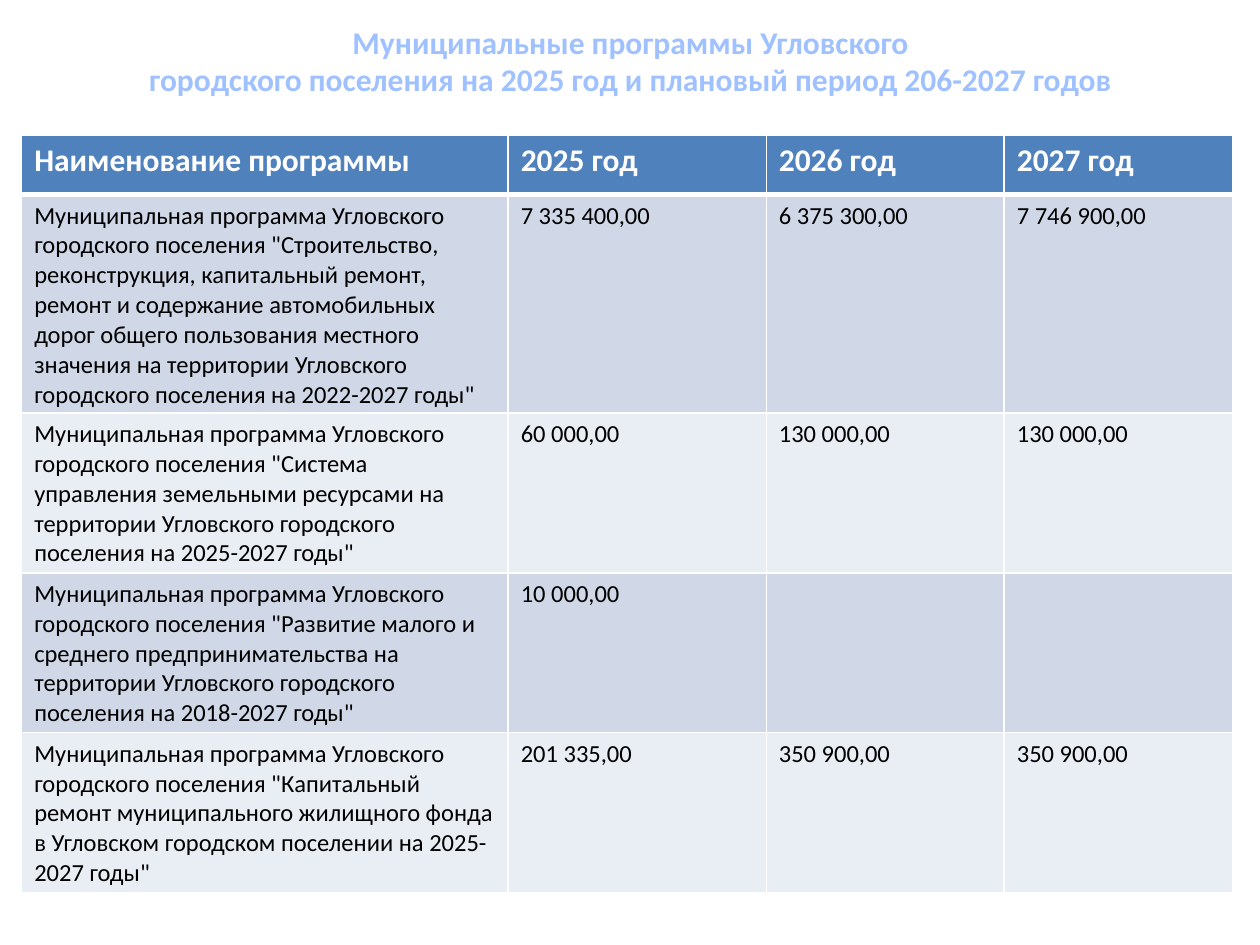
from dataclasses import dataclass

from lxml import etree
from pptx import Presentation
from pptx import util as u
from pptx.dml.color import RGBColor
from pptx.enum import text
from pptx.oxml import ns


@dataclass(frozen=True)
class Theme:
    font: str = "Calibri"
    heading_size: int = 18
    body_size: int = 14
    header_fill: str = "4F81BD"
    header_text: str = "FFFFFF"
    body_text: str = "000000"
    bands: tuple = ("D0D8E8", "E9EDF4")
    border: str = "FFFFFF"
    title_outline: str = "467AB8"
    title_gradient: tuple = ((0, "BFD3F9"), (9, "A0C1FF"), (50, "003D85"),
                             (79, "A0C1FF"), (100, "BFD3F9"))


THEME = Theme()

TITLE = ("Муниципальные программы Угловского\n"
         "городского поселения на 2025 год и плановый период 206-2027 годов")
HEADER = ("Наименование программы", "2025 год", "2026 год", "2027 год")
PROGRAM = "Муниципальная программа Угловского городского поселения "
PROGRAMS = (
    (PROGRAM + '"Строительство, реконструкция, капитальный ремонт, ремонт и '
     "содержание автомобильных дорог общего пользования местного значения на "
     'территории Угловского городского поселения на 2022-2027 годы"',
     "7 335 400,00", "6 375 300,00", "7 746 900,00"),
    (PROGRAM + '"Система управления земельными ресурсами на территории '
     'Угловского городского поселения на 2025-2027 годы"',
     "60 000,00", "130 000,00", "130 000,00"),
    (PROGRAM + '"Развитие малого и среднего предпринимательства на территории '
     'Угловского городского поселения на 2018-2027 годы"',
     "10 000,00", "", ""),
    ("Муниципальная программа Угловского городского поселения "
     '"Капитальный ремонт муниципального жилищного фонда в Угловском '
     'городском поселении на 2025-2027 годы"',
     "201 335,00", "350 900,00", "350 900,00"),
)
COLUMN_WIDTHS = (278, 147.5, 136, 130.5)
HEADER_HEIGHT, ROW_HEIGHT = 34, 29.5


def add_node(parent, tag, **attributes):
    node = etree.SubElement(parent, ns.qn(tag))
    for name, value in attributes.items():
        node.set(name, str(value))
    return node


def add_line(parent, tag, width, color):
    line = add_node(parent, tag, w=u.Pt(width))
    add_node(add_node(line, "a:solidFill"), "a:srgbClr", val=color)


def style_runs(frame, size, bold, color=None):
    for paragraph in frame.paragraphs:
        for run in paragraph.runs:
            run.font.name = THEME.font
            run.font.size = u.Pt(size)
            run.font.bold = bold
            if color:
                run.font.color.rgb = RGBColor.from_string(color)


def paint_title_run(run):
    # Outline and gradient must precede the typeface in the run properties
    properties = run.font._element
    typeface = properties.find(ns.qn("a:latin"))
    properties.remove(typeface)
    add_line(properties, "a:ln", 0.83, THEME.title_outline)
    gradient = add_node(properties, "a:gradFill")
    stops = add_node(gradient, "a:gsLst")
    for position, color in THEME.title_gradient:
        stop = add_node(stops, "a:gs", pos=position * 1000)
        add_node(stop, "a:srgbClr", val=color)
    add_node(gradient, "a:lin", ang=90 * 60000)
    properties.append(typeface)


def add_title(slide):
    title = slide.shapes.add_textbox(u.Pt(14.4), u.Pt(9.4), u.Pt(692), u.Pt(51))
    frame = title.text_frame
    frame.word_wrap = True
    frame.text = TITLE
    style_runs(frame, THEME.heading_size, True)
    for paragraph in frame.paragraphs:
        paragraph.alignment = text.PP_ALIGN.CENTER
        for run in paragraph.runs:
            paint_title_run(run)


def fill_cell(cell, content, fill, color, size, bold, top=1, bottom=1):
    cell.text_frame.text = content
    style_runs(cell.text_frame, size, bold, color)
    if not content:
        cell.text_frame.paragraphs[0].font.size = u.Pt(size)
    properties = cell._tc.get_or_add_tcPr()
    for side, width in (("L", 1), ("R", 1), ("T", top), ("B", bottom)):
        add_line(properties, "a:ln" + side, width, THEME.border)
    cell.fill.solid()
    cell.fill.fore_color.rgb = RGBColor.from_string(fill)


def add_program_table(slide):
    height = HEADER_HEIGHT + ROW_HEIGHT * len(PROGRAMS)
    table = slide.shapes.add_table(
        len(PROGRAMS) + 1, len(HEADER), u.Pt(12.4), u.Pt(77.2),
        u.Pt(sum(COLUMN_WIDTHS)), u.Pt(height)).table
    for column, width in zip(table.columns, COLUMN_WIDTHS):
        column.width = u.Pt(width)
    for row in table.rows:
        row.height = u.Pt(ROW_HEIGHT)
    table.rows[0].height = u.Pt(HEADER_HEIGHT)

    # Header row with a heavier rule below it
    for column, label in enumerate(HEADER):
        fill_cell(table.cell(0, column), label, THEME.header_fill,
                  THEME.header_text, THEME.heading_size, True, bottom=3)

    # Banded rows, which grow to fit the program names
    for index, program in enumerate(PROGRAMS):
        band = THEME.bands[index % 2]
        for column, value in enumerate(program):
            fill_cell(table.cell(index + 1, column), value, band,
                      THEME.body_text, THEME.body_size, False,
                      top=1 if index else 3)


def main():
    presentation = Presentation()
    presentation.slide_width, presentation.slide_height = u.Pt(720), u.Pt(540)
    slide = presentation.slides.add_slide(presentation.slide_layouts[6])
    add_title(slide)
    add_program_table(slide)
    presentation.save("out.pptx")


if __name__ == "__main__":
    main()
